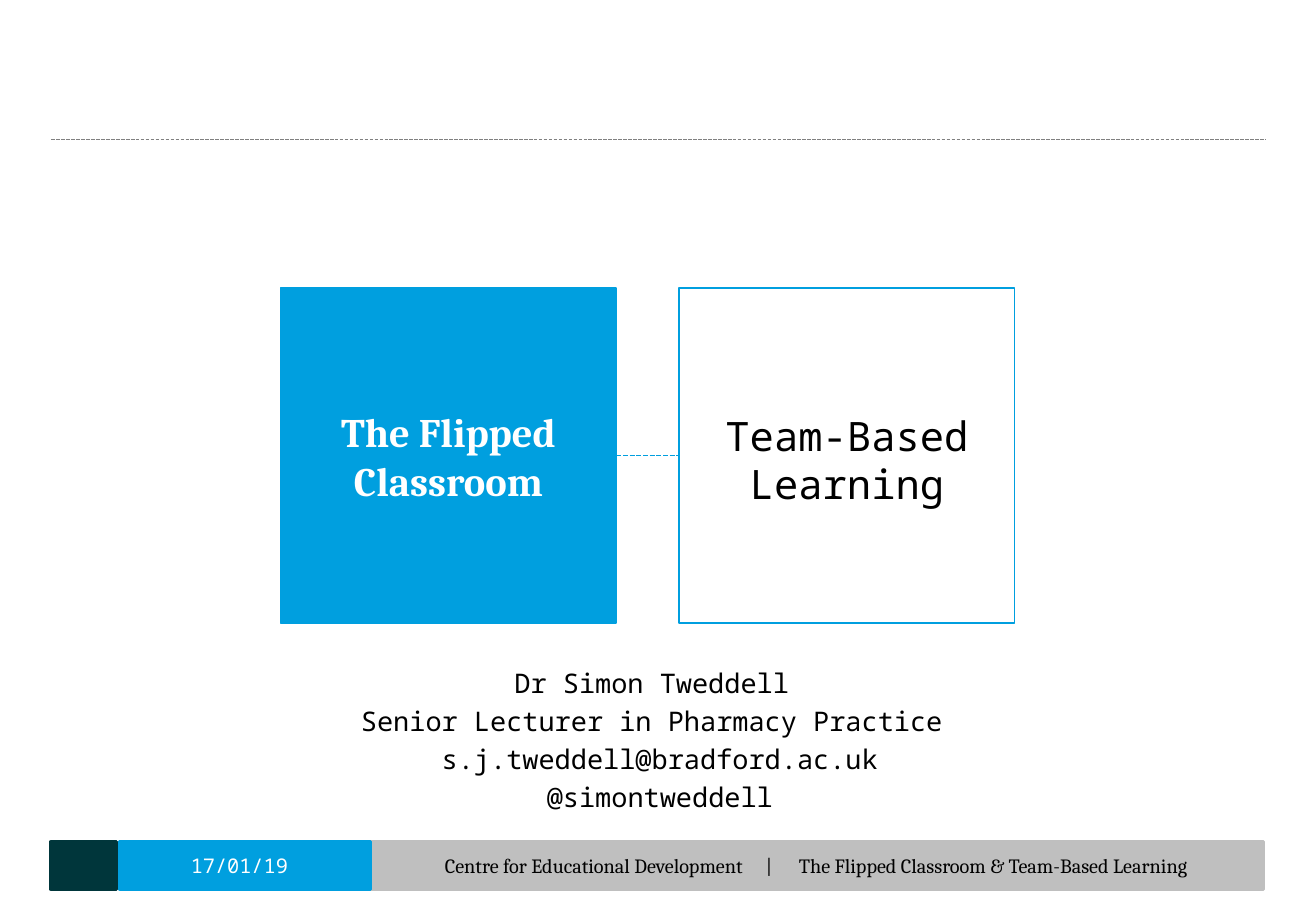
from dataclasses import dataclass

from lxml.etree import SubElement
from pptx import Presentation
from pptx.dml.color import RGBColor as Rgb
from pptx.enum.dml import MSO_LINE_DASH_STYLE as Dash
from pptx.enum.shapes import MSO_CONNECTOR as Connector, MSO_SHAPE as Shape
from pptx.enum.text import MSO_ANCHOR as Anchor, MSO_AUTO_SIZE as AutoSize, PP_ALIGN as Align
from pptx.oxml.ns import qn
from pptx.util import Cm, Pt


@dataclass(frozen=True)
class Theme:
    blue: Rgb = Rgb(0x00, 0x9F, 0xDF)
    teal: Rgb = Rgb(0x00, 0x36, 0x3B)
    silver: Rgb = Rgb(0xBF, 0xBF, 0xBF)
    grey: Rgb = Rgb(0x80, 0x80, 0x80)
    white: Rgb = Rgb(0xFF, 0xFF, 0xFF)
    black: Rgb = Rgb(0x00, 0x00, 0x00)
    serif: str = "Cambria"
    mono: str = "Noto Sans Mono"
    heading: int = 24
    body: int = 16
    footer: int = 12


theme = Theme()


def write(box, *lines, font=theme.mono, size=theme.body, color=theme.black, bold=False,
          align=Align.CENTER, insets=(0.3, 0.3, 0.3, 0.3), pitch=None, gap=0, tabs=()):
    frame = box.text_frame
    frame.word_wrap = True
    frame.auto_size = AutoSize.NONE
    frame.vertical_anchor = Anchor.MIDDLE
    frame.margin_left, frame.margin_top, frame.margin_right, frame.margin_bottom = map(Cm, insets)
    for index, line in enumerate(lines):
        para = frame.paragraphs[0] if index == 0 else frame.add_paragraph()
        para.alignment = align
        para.space_before = Pt(gap if index else 0)
        if pitch:
            para.line_spacing = Pt(pitch)
        if tabs:
            stops = SubElement(para._p.get_or_add_pPr(), qn("a:tabLst"))
            for position, kind in tabs:
                SubElement(stops, qn("a:tab"), pos=str(Cm(position)), algn=kind)
        span = para.add_run()
        span.text = line
        span.font.name = font
        span.font.size = Pt(size)
        span.font.bold = bold
        span.font.color.rgb = color


deck = Presentation()
deck.slide_width, deck.slide_height = Cm(27.51), Cm(19.05)
page = deck.slides.add_slide(deck.slide_layouts[5])

square, square_top = 5.86 + 1.15, 6.02
title_left, topic_left = 5.87, 14.2

for left, right, y, color, width in (
    (1.07, 26.47, 2.92, theme.grey, 0.75),
    (title_left + square, topic_left, square_top + square / 2, theme.blue, 1),
):
    rule = page.shapes.add_connector(Connector.STRAIGHT, Cm(left), Cm(y), Cm(right), Cm(y))
    rule.line.color.rgb = color
    rule.line.width = Pt(width)
    rule.line.dash_style = Dash.SQUARE_DOT
    SubElement(rule._element.spPr, qn("a:effectLst"))

title = page.shapes.title
title.left, title.top = Cm(title_left), Cm(square_top)
title.width = title.height = Cm(square)
title.fill.solid()
title.fill.fore_color.rgb = theme.blue
title.line.color.rgb = theme.blue
title.line.width = Pt(0.75)
write(title, "The Flipped Classroom", font=theme.serif, size=theme.heading,
      color=theme.white, bold=True)

topic = page.shapes.add_shape(Shape.RECTANGLE, Cm(topic_left), Cm(square_top),
                              Cm(square), Cm(square))
topic.shadow.inherit = False
topic.fill.background()
topic.line.color.rgb = theme.blue
topic.line.width = Pt(1)
write(topic, "Team-Based Learning", size=theme.heading, pitch=28.4,
      insets=(0.3, 0.48, 0.3, 0.3))

speaker = page.shapes.add_textbox(Cm(4.17), Cm(13.98), Cm(19.25), Cm(3))
write(speaker, "Dr Simon Tweddell ", "Senior Lecturer in Pharmacy Practice ",
      "s.j.tweddell@bradford.ac.uk", "@simontweddell", pitch=19, gap=3.5)

bars = []
for left, width, color in (
    (1.07, 1.37, theme.teal),
    (7.75, 18.67, theme.silver),
    (2.51, 5.24, theme.blue),
):
    bar = page.shapes.add_shape(Shape.RECTANGLE, Cm(left), Cm(17.6), Cm(width), Cm(1))
    bar.shadow.inherit = False
    bar.fill.solid()
    bar.fill.fore_color.rgb = color
    bar.line.color.rgb = color
    bar.line.width = Pt(2)
    bars.append(bar)

corner, footer, date = bars
write(date, "17/01/19", size=theme.footer, color=theme.white, insets=(0, 0, 0.25, 0))
write(footer, "Centre for Educational Development\t|\tThe Flipped Classroom & Team-Based Learning",
      font=theme.serif, size=theme.footer, align=Align.LEFT, insets=(1.55, 0, 0.3, 0),
      tabs=((6.78, "ctr"), (7.4, "l")))

deck.save("out.pptx")
